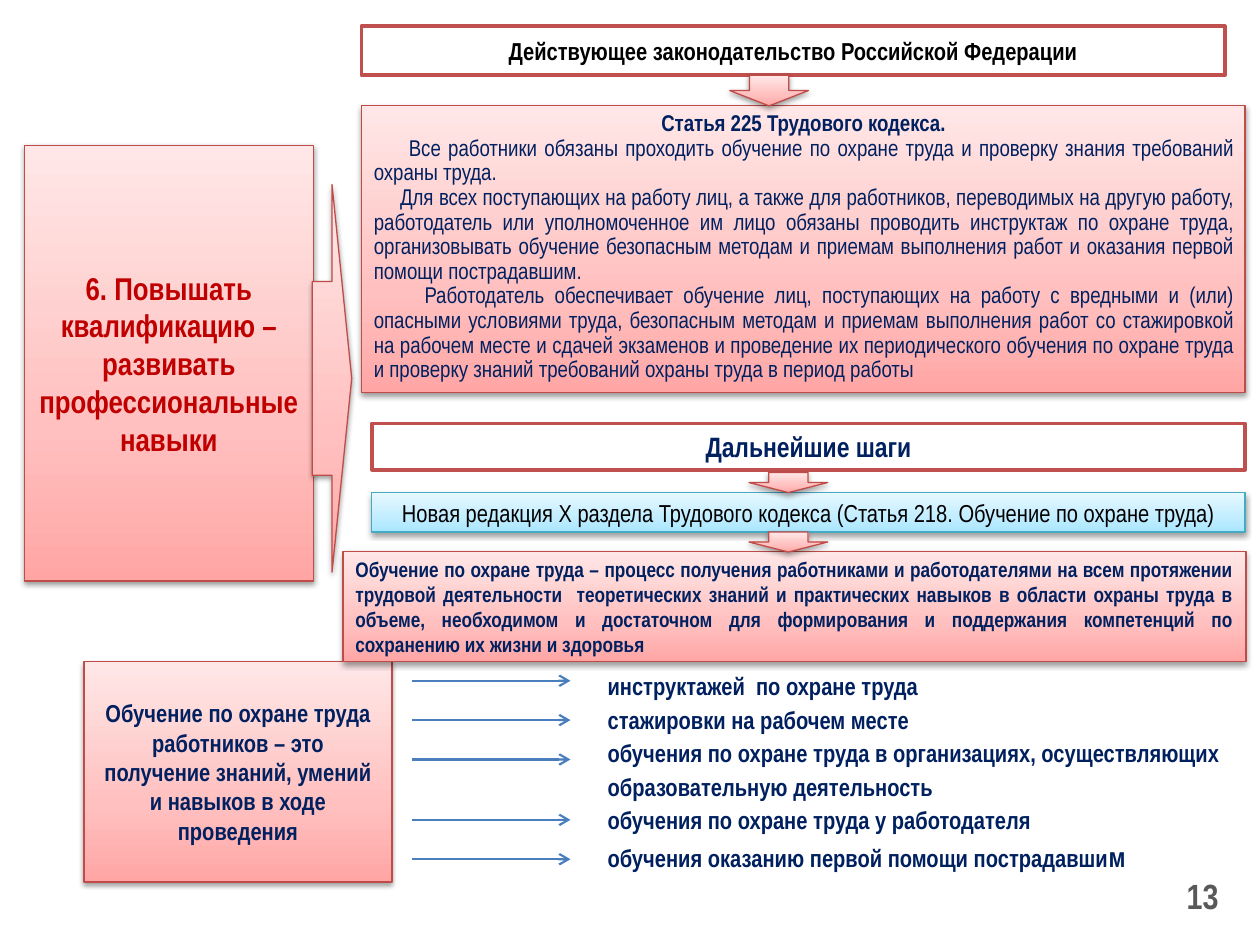
import copy
import pptx
import pptx.util
import pptx.dml.color
import pptx.enum.shapes
import pptx.enum.text
import pptx.oxml
import pptx.oxml.ns

Pt = pptx.util.Pt
RGB = pptx.dml.color.RGBColor.from_string
qn = pptx.oxml.ns.qn
SHAPE = pptx.enum.shapes.MSO_SHAPE
ALIGN = pptx.enum.text.PP_ALIGN
ANCHOR = pptx.enum.text.MSO_ANCHOR
NS = pptx.oxml.ns.nsdecls("a")

THEME = {
    "font": "Arial Narrow",
    "navy": "002060", "red": "C00000", "black": "000000", "gray": "595959",
    "white": "FFFFFF", "arrow": "4B7EBC", "frame": "C0504D",
    "pink": {"stops": ((0, "FFA6A5"), (0.35, "FFC0BF"), (1, "FFE7E7")), "line": "BF4C48"},
    "blue": {"stops": ((0, "A7E6FF"), (0.35, "C1EDFF"), (1, "E7F8FF")), "line": "46AAC5"},
    "definition": 12, "article": 13, "normal": 14, "heading": 16, "title": 18, "number": 20,
}


def paint(sp, style):
    sp.shadow.inherit = False
    if style == "frame":
        sp.fill.solid()
        sp.fill.fore_color.rgb = RGB(THEME["white"])
        sp.line.color.rgb = RGB(THEME["frame"])
        sp.line.width = Pt(2)
        return
    sp.fill.gradient()
    sp.fill.gradient_angle = 90
    gs = sp._element.spPr.find(".//" + qn("a:gsLst"))
    gs.insert(1, copy.deepcopy(gs[0]))
    for stop, (position, color) in zip(sp.fill.gradient_stops, THEME[style]["stops"]):
        stop.position = position
        stop.color.rgb = RGB(color)
        for change in list(stop.color._xFill[0] if hasattr(stop.color, "_xFill") else []):
            change.getparent().remove(change)
    sp.line.color.rgb = RGB(THEME[style]["line"])
    sp.line.width = Pt(0.75)
    sp._element.spPr.find(qn("a:effectLst")).append(pptx.oxml.parse_xml(
        f'<a:outerShdw {NS} blurRad="{Pt(3.1)}" dist="{Pt(1.6)}" dir="5400000" rotWithShape="0">'
        '<a:srgbClr val="000000"><a:alpha val="38000"/></a:srgbClr></a:outerShdw>'))


def write(sp, paragraphs, size, color, align=ALIGN.CENTER, spacing=1.0, anchor=ANCHOR.MIDDLE):
    tf = sp.text_frame
    frame = {"word_wrap": True, "auto_size": pptx.enum.text.MSO_AUTO_SIZE.NONE,
             "vertical_anchor": anchor, "margin_left": Pt(7.2), "margin_right": Pt(7.2),
             "margin_top": Pt(3.6), "margin_bottom": Pt(3.6)}
    for name, value in frame.items():
        setattr(tf, name, value)
    for i, (text, fmt) in enumerate(paragraphs):
        p = tf.paragraphs[0] if i == 0 else tf.add_paragraph()
        pPr = p._p.get_or_add_pPr()
        pPr.set("marL", "0")
        pPr.set("indent", str(Pt(fmt.get("indent", 0))))
        pPr.append(pptx.oxml.parse_xml(f"<a:buNone {NS}/>"))
        layout = {"alignment": fmt.get("align", align), "line_spacing": spacing,
                  "space_before": Pt(0), "space_after": Pt(0)}
        for name, value in layout.items():
            setattr(p, name, value)
        for part, part_size in [(text, size)] + fmt.get("more", []):
            r = p.add_run()
            r.text = part
            font = {"name": THEME["font"], "size": Pt(THEME[part_size]), "bold": fmt.get("bold", True)}
            for name, value in font.items():
                setattr(r.font, name, value)
            r.font.color.rgb = RGB(THEME[color])


prs = pptx.Presentation()
prs.slide_width, prs.slide_height = Pt(720), Pt(540)
s = prs.slides.add_slide(prs.slide_layouts[1])

title, body = s.shapes.title, s.placeholders[1]
for sp, box in ((title, (14, 83, 165, 249)), (body, (340, 378, 380, 124))):
    for name, value in zip(("left", "top", "width", "height"), box):
        setattr(sp, name, Pt(value))
paint(title, "pink")
write(title, [("6. Повышать квалификацию – развивать профессиональные навыки", {})], "title", "red")
write(body, [
    ("инструктажей  по охране труда", {}),
    ("стажировки на рабочем месте", {}),
    ("обучения по охране труда в организациях, осуществляющих образовательную деятельность", {}),
    ("обучения по охране труда у работодателя", {}),
    ("обучения оказанию первой помощи пострадавши", {"more": [("м", "heading")]}),
], "normal", "navy", ALIGN.LEFT, 1.14)

for y in (389, 411.5, 434, 468.5, 491):
    line = s.shapes.add_connector(pptx.enum.shapes.MSO_CONNECTOR.STRAIGHT, Pt(235.5), Pt(y), Pt(326), Pt(y))
    line.line.color.rgb = RGB(THEME["arrow"])
    line.line.width = Pt(1.25)
    line.line._get_or_add_ln().append(pptx.oxml.parse_xml(f'<a:tailEnd {NS} type="arrow"/>'))
    line._element.spPr.append(pptx.oxml.parse_xml(f"<a:effectLst {NS}/>"))

body_text = {"bold": False, "align": ALIGN.JUSTIFY}
article = [
    ("Статья 225 Трудового кодекса.", {}),
    ("Все работники обязаны проходить обучение по охране труда и проверку знания требований охраны труда.",
     {**body_text, "indent": 20}),
    ("Для всех поступающих на работу лиц, а также для работников, переводимых на другую работу, "
     "работодатель или уполномоченное им лицо обязаны проводить инструктаж по охране труда, "
     "организовывать обучение безопасным методам и приемам выполнения работ и оказания первой "
     "помощи пострадавшим.", {**body_text, "indent": 15}),
    ("Работодатель обеспечивает обучение лиц, поступающих на работу с вредными и (или) опасными "
     "условиями труда, безопасным методам и приемам выполнения работ со стажировкой на рабочем месте "
     "и сдачей экзаменов и проведение их периодического обучения по охране труда и проверку знаний "
     "требований охраны труда в период работы", {**body_text, "indent": 29}),
]
definition = ("Обучение по охране труда – процесс получения работниками и работодателями на всем протяжении "
              "трудовой деятельности  теоретических знаний и практических навыков в области охраны труда в "
              "объеме, необходимом и достаточном для формирования и поддержания компетенций по сохранению "
              "их жизни и здоровья")
training = "Обучение по охране труда работников – это получение знаний, умений и навыков в ходе проведения"
revision = "Новая редакция Х раздела Трудового кодекса (Статья 218. Обучение по охране труда)"

boxes = [
    ((48, 378, 176, 126), "pink", [(training, {})], {"size": "normal", "color": "navy"}),
    ((196, 315, 516, 63), "pink", [(definition, {})],
     {"size": "definition", "color": "navy", "align": ALIGN.JUSTIFY}),
    ((212.5, 281.5, 499, 22.5), "blue", [(revision, {"bold": False})], {"size": "normal", "color": "black"}),
    ((206.5, 60.5, 505, 164), "pink", article,
     {"size": "article", "color": "navy", "spacing": 0.9, "anchor": ANCHOR.TOP}),
    ((206.5, 15, 493.5, 28), "frame", [("Действующее законодательство Российской Федерации", {})],
     {"size": "normal", "color": "black"}),
    ((212.5, 242, 499, 26.5), "frame", [("Дальнейшие шаги", {})], {"size": "heading", "color": "navy"}),
]
for box, style, paragraphs, fmt in boxes:
    sp = s.shapes.add_shape(SHAPE.RECTANGLE, *map(Pt, box))
    paint(sp, style)
    write(sp, paragraphs, **fmt)

for shape, box in (
    (SHAPE.RIGHT_ARROW, (178.5, 105.5, 22.5, 221.5)),
    (SHAPE.DOWN_ARROW, (417, 43, 45, 17.5)),
    (SHAPE.DOWN_ARROW, (428, 304, 45, 11.5)),
    (SHAPE.DOWN_ARROW, (428, 270, 45, 11.5)),
):
    paint(s.shapes.add_shape(shape, *map(Pt, box)), "pink")

number = s.shapes.add_textbox(Pt(535.5), Pt(497), Pt(168), Pt(29))
write(number, [("13", {})], "number", "gray", ALIGN.RIGHT)

prs.save("out.pptx")
